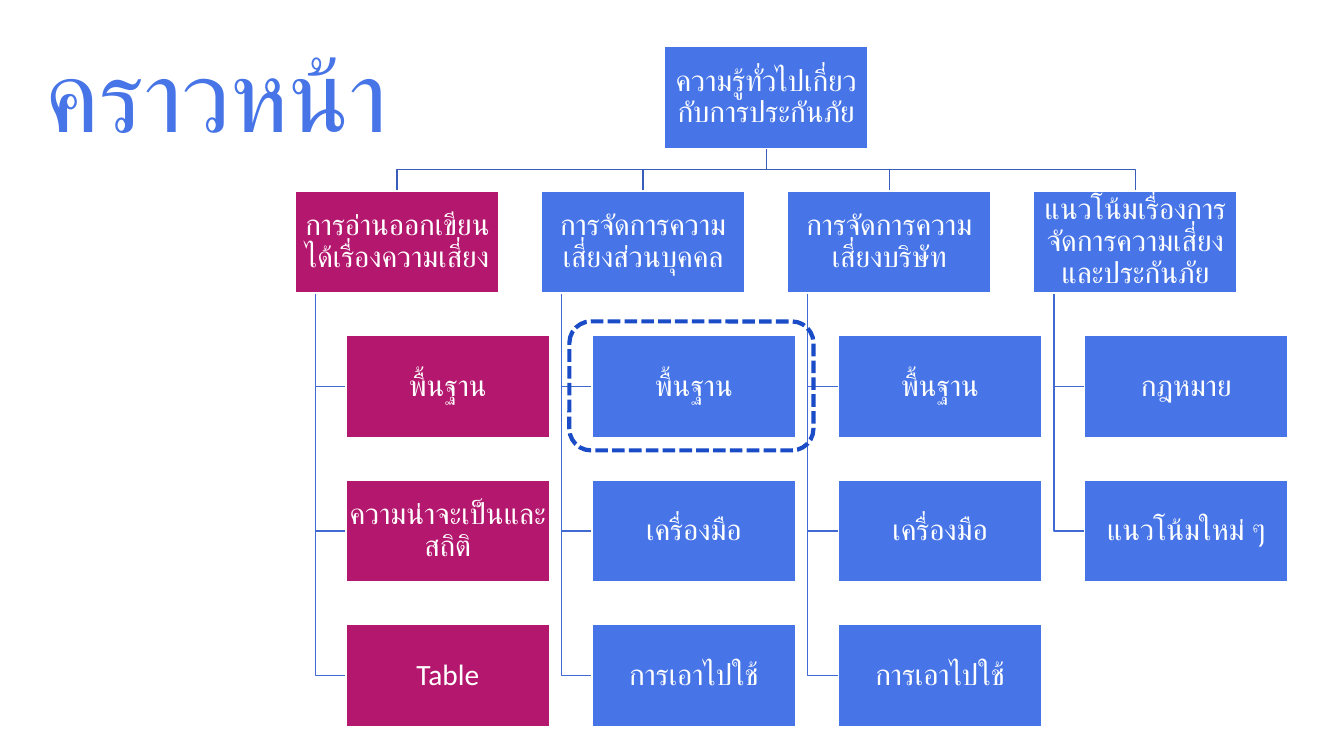
from pptx import Presentation
from pptx.dml.color import RGBColor
from pptx.enum.dml import MSO_LINE
from pptx.enum.shapes import MSO_SHAPE
from pptx.enum.text import MSO_ANCHOR, PP_ALIGN
from pptx.util import Cm, Pt

RECTANGLE = MSO_SHAPE.RECTANGLE
ROUNDED = MSO_SHAPE.ROUNDED_RECTANGLE
DASH = MSO_LINE.SQUARE_DOT
MIDDLE, BOTTOM = MSO_ANCHOR.MIDDLE, MSO_ANCHOR.BOTTOM
CENTER, LEFT = PP_ALIGN.CENTER, PP_ALIGN.LEFT

COLORS = {
    "blue": "4775E7",
    "magenta": "B4186E",
    "white": "FFFFFF",
    "trunk": "395EB9",
    "branch": "406AD2",
    "highlight": "1A4CC8",
}

CARD_WIDTH, CARD_HEIGHT = Cm(5.13), Cm(2.57)
TOPIC_INDENT, STEM_INDENT = Cm(1.28), Cm(0.51)
CARD_INSET = Cm(0.03)

ROOT = "ความรู้ทั่วไปเกี่ยวกับการประกันภัย"
COURSES = [
    ("การอ่านออกเขียนได้เรื่องความเสี่ยง", "magenta",
     ["พื้นฐาน", "ความน่าจะเป็นและสถิติ", "Table"]),
    ("การจัดการความเสี่ยงส่วนบุคคล", "blue",
     ["พื้นฐาน", "เครื่องมือ", "การเอาไปใช้"]),
    ("การจัดการความเสี่ยงบริษัท", "blue",
     ["พื้นฐาน", "เครื่องมือ", "การเอาไปใช้"]),
    ("แนวโน้มเรื่องการจัดการความเสี่ยงและประกันภัย", "blue",
     ["กฎหมาย", "แนวโน้มใหม่ ๆ"]),
]


def rgb(name):
    return RGBColor.from_string(COLORS[name])


def apply(target, values):
    for name, value in values.items():
        setattr(target, name, value)


def write(frame, text, size, color, align, spacing):
    para = frame.paragraphs[0]
    apply(para, {"alignment": align, "line_spacing": spacing})
    span = para.add_run()
    span.text = text
    apply(span.font, {"name": "Calibri", "size": Pt(size)})
    span.font.color.rgb = rgb(color)


def draw_title(page, box):
    frame = page.shapes.add_textbox(*box).text_frame
    apply(frame, {"word_wrap": True, "vertical_anchor": BOTTOM})
    write(frame, "คราวหน้า", 72, "blue", LEFT, 0.8)


def draw_card(page, left, top, text, color):
    card = page.shapes.add_shape(RECTANGLE, left, top, CARD_WIDTH, CARD_HEIGHT)
    card.shadow.inherit = False
    card.fill.solid()
    card.fill.fore_color.rgb = rgb(color)
    card.line.color.rgb = rgb("white")
    card.line.width = Pt(1)
    apply(card.text_frame, {
        "word_wrap": True,
        "vertical_anchor": MIDDLE,
        "margin_left": CARD_INSET,
        "margin_right": CARD_INSET,
        "margin_top": CARD_INSET,
        "margin_bottom": CARD_INSET,
    })
    write(card.text_frame, text, 21, "white", CENTER, 0.9)


def draw_elbow(page, points, color):
    builder = page.shapes.build_freeform(*points[0])
    builder.add_line_segments(points[1:], close=False)
    elbow = builder.convert_to_shape()
    elbow.shadow.inherit = False
    elbow.fill.background()
    elbow.line.color.rgb = rgb(color)
    elbow.line.width = Pt(1)


def draw_course(page, left, top, row_step, course):
    heading, color, topics = course
    stem = left + STEM_INDENT
    topic_left = left + TOPIC_INDENT
    bottom = top + CARD_HEIGHT
    for row, topic in enumerate(topics, start=1):
        topic_top = top + row * row_step
        middle = topic_top + CARD_HEIGHT // 2
        draw_elbow(page, [(stem, bottom), (stem, middle), (topic_left, middle)], "branch")
        draw_card(page, topic_left, topic_top, topic, color)
    draw_card(page, left, top, heading, color)


def draw_hierarchy(page, box):
    left, top, width, height = box
    last = len(COURSES) - 1
    column_step = (width - TOPIC_INDENT - CARD_WIDTH) // last
    row_step = (height - CARD_HEIGHT) // 4
    root_left = left + last * column_step // 2
    root_center = root_left + CARD_WIDTH // 2
    root_bottom = top + CARD_HEIGHT
    course_top = top + row_step
    rail = (root_bottom + course_top) // 2
    for column, course in enumerate(COURSES):
        course_left = left + column * column_step
        center = course_left + CARD_WIDTH // 2
        draw_elbow(page, [(root_center, root_bottom), (root_center, rail),
                          (center, rail), (center, course_top)], "trunk")
        draw_course(page, course_left, course_top, row_step, course)
    draw_card(page, root_left, top, ROOT, "blue")


def draw_highlight(page, box):
    frame = page.shapes.add_shape(ROUNDED, *box)
    frame.shadow.inherit = False
    frame.fill.background()
    frame.line.color.rgb = rgb("highlight")
    apply(frame.line, {"width": Pt(3), "dash_style": DASH})


def main():
    deck = Presentation()
    apply(deck, {"slide_width": Cm(33.87), "slide_height": Cm(19.05)})
    page = deck.slides.add_slide(deck.slide_layouts[6])
    draw_title(page, (Cm(0.91), Cm(1.17), Cm(31.14), Cm(2.79)))
    draw_hierarchy(page, (Cm(7.44), Cm(1.17), Cm(25.02), Cm(17.14)))
    draw_highlight(page, (Cm(14.35), Cm(8.1), Cm(6.15), Cm(3.25)))
    deck.save("out.pptx")


if __name__ == "__main__":
    main()
